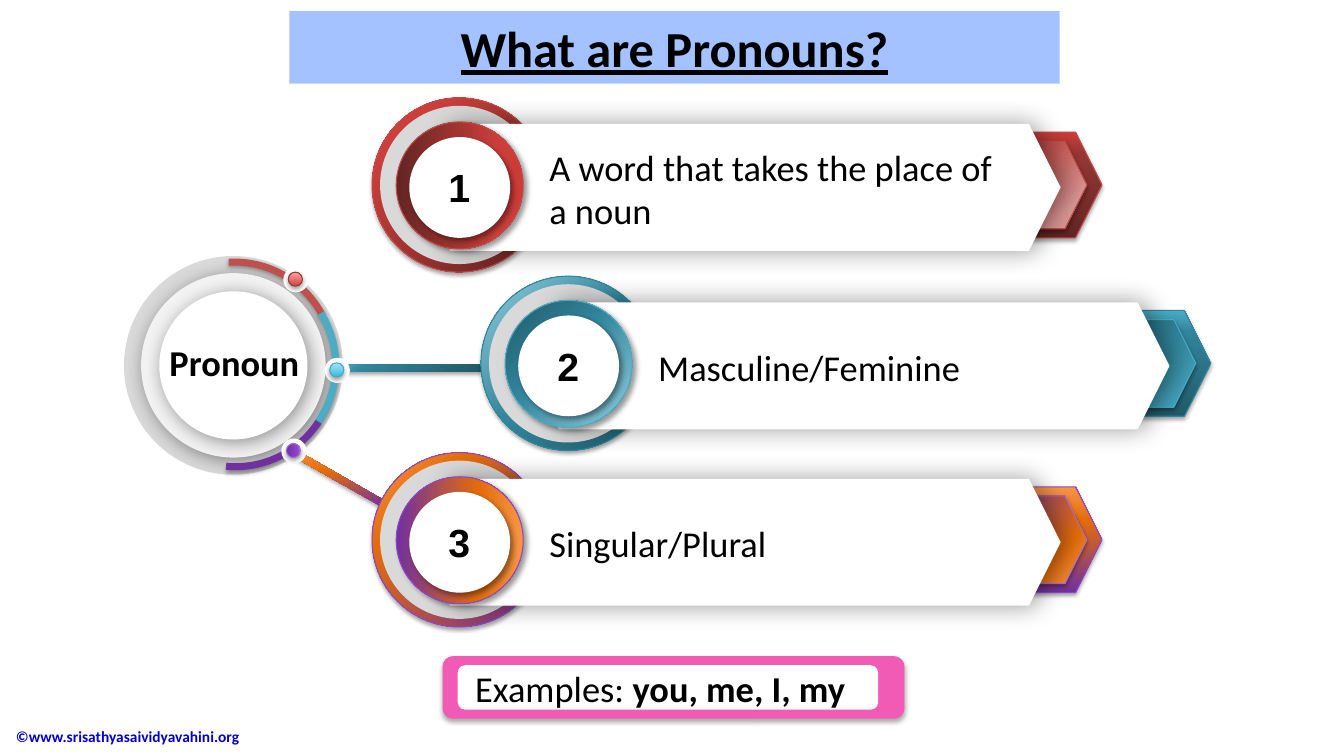
import pptx
import pptx.dml.color
import pptx.enum.shapes
import pptx.enum.text
import pptx.oxml
import pptx.oxml.ns
import pptx.util

Inches, Pt = pptx.util.Inches, pptx.util.Pt
SHAPE = pptx.enum.shapes.MSO_SHAPE
ALIGN = pptx.enum.text.PP_ALIGN
MIDDLE = pptx.enum.text.MSO_ANCHOR.MIDDLE
NS = pptx.oxml.ns.nsdecls("a")

# Shadows: opacity %, blur pt, distance pt, direction in degrees
SOFT = (35, 3.1, 1.8, 90)
DISC = (40, 13, 3, 45)
CORE = (40, 4, 3, 45)
BANNER = (40, 19, 3, 0)
PANEL = (32, 3.5, 2.2, 90)

TEAL_BAR = [(0, "215968"), (80, "31859C"), (100, "4BACC6")]
ORANGE_BAR = [(0, "7030A0"), (62, "E46C0A"), (100, "F79646")]
RED_RING = [(0, "632523"), (80, "CB3E3A"), (100, "CE3B37")]

# Each part of an item: (gradient stops, angle, line colour)
RED = {
    "arrow": ([(0, "632523"), (80, "953735"), (100, "CE3B37")], 270, "BF4C48"),
    "tip": ([(0, "632523"), (38, "C0504D"), (80, "D99694"), (100, "D99694")], 45, "BF4C48"),
    "ring": (RED_RING, 225, "BF4C48"),
    "core": (RED_RING, 0, "BF4C48"),
}
TEAL = {
    "arrow": (TEAL_BAR, 270, "31859C"),
    "tip": ([(0, "215968"), (53, "31859C"), (100, "4BACC6")], 45, "4BACC6"),
    "ring": ([(0, "215968"), (52, "31859C"), (100, "93CDDD")], 225, "31859C"),
    "core": ([(0, "215968"), (43, "31859C"), (100, "93CDDD")], 45, "4BACC6"),
}


def orange(middle):
    return [(0, "7030A0"), (middle, "E46C0A"), (100, "F79646")]


ORANGE = {
    "arrow": (orange(68), 270, "8F45C7"),
    "tip": (orange(69), 45, "A86ED4"),
    "ring": (orange(72), 225, "8F45C7"),
    "core": (orange(65), 0, "8F45C7"),
}


def rgb(color):
    return pptx.dml.color.RGBColor.from_string(color)


def set_gradient(sp, stops, angle):
    """Fill with (percent, colour) stops; angle runs clockwise."""
    sp.fill.gradient()
    sp.fill.gradient_angle = (360 - angle) % 360
    gs_list = sp._element.spPr.find(".//" + pptx.oxml.ns.qn("a:gsLst"))
    for gs in list(gs_list):
        gs_list.remove(gs)
    for percent, color in stops:
        gs_list.append(pptx.oxml.parse_xml(
            f'<a:gs {NS} pos="{percent * 1000}"><a:srgbClr val="{color}"/></a:gs>'))


def set_shadow(sp, opacity, blur, distance, direction):
    effects = sp._element.spPr.find(pptx.oxml.ns.qn("a:effectLst"))
    effects.append(pptx.oxml.parse_xml(
        f'<a:outerShdw {NS} blurRad="{Pt(blur)}" dist="{Pt(distance)}" '
        f'dir="{direction * 60000}" rotWithShape="0"><a:srgbClr val="000000">'
        f'<a:alpha val="{opacity * 1000}"/></a:srgbClr></a:outerShdw>'))


def add_shape(s, kind, x, y, w, h, fill=None, angle=0, line=None, width=0.75,
              shadow=None, rotation=0):
    """Add a preset shape; fill is a colour, a list of gradient stops or None."""
    sp = s.shapes.add_shape(kind, Inches(x), Inches(y), Inches(w), Inches(h))
    sp.shadow.inherit = False
    sp.rotation = rotation
    if fill is None:
        sp.fill.background()
    elif isinstance(fill, str):
        sp.fill.solid()
        sp.fill.fore_color.rgb = rgb(fill)
    else:
        set_gradient(sp, fill, angle)
    if line:
        sp.line.color.rgb = rgb(line)
        sp.line.width = Pt(width)
    else:
        sp.line.fill.background()
    if shadow:
        set_shadow(sp, *shadow)
    return sp


def format_run(r, size, bold=False, color="000000", font="Calibri"):
    r.font.size = Pt(size)
    r.font.bold = bold
    r.font.name = font
    r.font.color.rgb = rgb(color)


def add_text(s, x, y, w, h, runs, size, align=ALIGN.LEFT, **style):
    """Add a one-paragraph text box; runs are (text, bold) pairs."""
    tf = s.shapes.add_textbox(Inches(x), Inches(y), Inches(w), Inches(h)).text_frame
    tf.word_wrap = True
    tf.vertical_anchor = MIDDLE
    p = tf.paragraphs[0]
    p.alignment = align
    for text, bold in runs:
        r = p.add_run()
        r.text = text
        format_run(r, size, bold, **style)


def add_title(s, x, y, w, h):
    title = s.shapes.title
    title.left, title.top, title.width, title.height = map(Inches, (x, y, w, h))
    title.fill.solid()
    title.fill.fore_color.rgb = rgb("A3C2FF")
    tf = title.text_frame
    tf.text = "What are Pronouns?"
    tf.vertical_anchor = MIDDLE
    p = tf.paragraphs[0]
    p.alignment = ALIGN.CENTER
    format_run(p.runs[0], 36, True)
    p.runs[0].font.underline = True


def add_hub(s, x, y, size):
    for inset, fill, shadow in ((0, "D9D9D9", None), (0.17, "F2F2F2", DISC),
                                (0.35, "FFFFFF", DISC)):
        side = size - 2 * inset
        add_shape(s, SHAPE.OVAL, x + inset, y + inset, side, side, fill, shadow=shadow)
    add_text(s, x + 0.32, y + 0.78, 1.55, 0.54, [("Pronoun", True)], 26, ALIGN.CENTER)


def add_arc(s, x, y, rotation, start, end, color):
    sp = add_shape(s, SHAPE.ARC, x, y, 1.97, 1.97, line=color, width=5,
                   shadow=SOFT, rotation=rotation)
    sp.adjustments[0], sp.adjustments[1] = start, end


def add_dot(s, x, y, stops, angle, line):
    add_shape(s, SHAPE.OVAL, x, y, 0.25, 0.25, "FFFFFF")
    add_shape(s, SHAPE.OVAL, x + 0.05, y + 0.05, 0.14, 0.14, stops, angle, line, shadow=SOFT)


def add_spokes(s):
    """Coloured arcs and dots around the hub, with the bars to items 2 and 3."""
    add_arc(s, 1.34, 2.6, 339.6, 172.3, 211.01, "C0504D")
    add_dot(s, 2.81, 2.65, [(0, "D1403C"), (100, "FFA6A5")], 270, "953735")
    add_shape(s, SHAPE.RECTANGLE, 3.34, 3.62, 1.44, 0.07, TEAL_BAR, 225, shadow=SOFT)
    add_arc(s, 1.36, 2.64, 43.7, 170.74, 210.66, "4BACC6")
    add_dot(s, 3.22, 3.55, [(0, "39B7D8"), (100, "A7E6FF")], 270, "46AAC5")
    add_shape(s, SHAPE.RECTANGLE, 2.82, 4.71, 1.08, 0.07, ORANGE_BAR, 225,
              shadow=SOFT, rotation=29.7)
    add_arc(s, 1.35, 2.66, 95.4, 178.72, 0, "7030A0")
    add_dot(s, 2.79, 4.35, [(0, "7030A0"), (80, "8F45C7"), (100, "A86ED4")], 0, "A86ED4")


def add_item(s, x, y, number, text, palette):
    """Numbered ring at (x, y) with a banner and arrow to its right."""
    add_shape(s, SHAPE.HEXAGON, x + 6.01, y + 0.34, 1.23, 1.05, *palette["arrow"], shadow=SOFT)
    add_shape(s, SHAPE.HEXAGON, x + 6.07, y + 0.43, 1.02, 0.87, *palette["tip"], shadow=SOFT)
    add_shape(s, SHAPE.OVAL, x, y, 1.73, 1.73, *palette["ring"], shadow=SOFT)
    add_shape(s, SHAPE.OVAL, x + 0.08, y + 0.08, 1.57, 1.57, "D9D9D9")
    add_shape(s, SHAPE.HEXAGON, x + 0.46, y + 0.26, 6.37, 1.26, "FFFFFF", shadow=BANNER)
    add_shape(s, SHAPE.OVAL, x + 0.24, y + 0.24, 1.26, 1.26, *palette["core"], shadow=CORE)
    add_shape(s, SHAPE.OVAL, x + 0.37, y + 0.39, 1, 1, "FFFFFF", shadow=CORE)
    add_text(s, x + 0.66, y + 0.6, 0.43, 0.57, [(str(number), True)], 28, font="Arial")
    add_text(s, x + 1.66, y + 0.41, 4.6, 0.98, [(text, False)], 26)


def add_examples(s, x, y, w, h):
    add_shape(s, SHAPE.ROUNDED_RECTANGLE, x, y, w, h, "F15BB5", shadow=PANEL)
    add_shape(s, SHAPE.ROUNDED_RECTANGLE, x + 0.15, y + 0.09, w - 0.41, h - 0.18, "FFFFFF")
    add_text(s, x + 0.13, y + 0.05, w - 0.52, 0.54,
             [("Examples: ", False), ("you, me, I, my", True)], 26, ALIGN.CENTER)


def main():
    prs = pptx.Presentation()
    prs.slide_width, prs.slide_height = Inches(13.33), Inches(7.5)
    s = prs.slides.add_slide(prs.slide_layouts.get_by_name("Title Only"))
    add_text(s, 0.06, 7.1, 3.53, 0.41, [("©www.srisathyasaividyavahini.org", True)], 11,
             color="0000CC")
    add_hub(s, 1.23, 2.54, 2.17)
    add_title(s, 2.87, 0.11, 7.64, 0.72)
    add_spokes(s)
    items = [(3.69, 0.97, "A word that takes the place of a noun", RED),
             (4.77, 2.74, "Masculine/Feminine", TEAL),
             (3.69, 4.49, "Singular/Plural", ORANGE)]
    for number, (x, y, text, palette) in enumerate(items, 1):
        add_item(s, x, y, number, text, palette)
    add_examples(s, 4.39, 6.51, 4.58, 0.62)
    prs.save("out.pptx")


if __name__ == "__main__":
    main()
